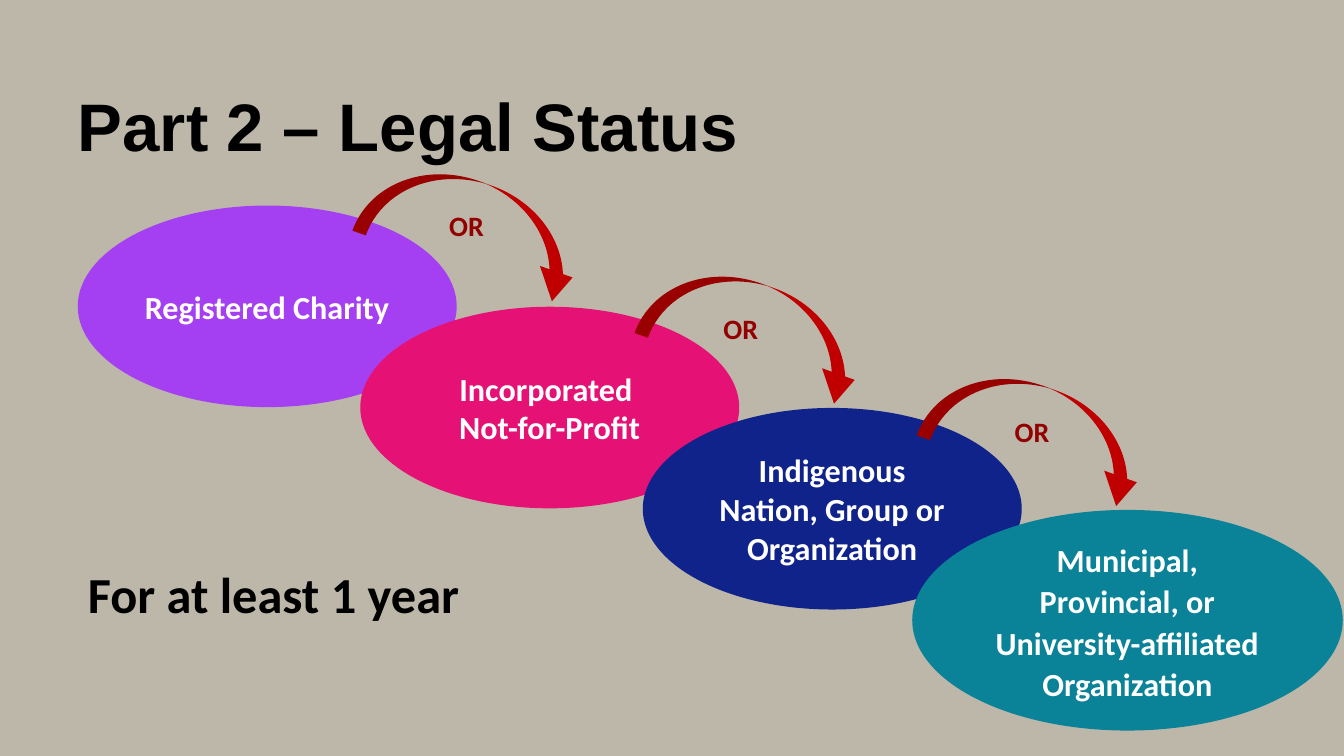
import pptx
import pptx.dml.color
import pptx.enum.shapes
import pptx.enum.text
import pptx.oxml.ns
import pptx.util
from lxml import etree

Cm = pptx.util.Cm
Pt = pptx.util.Pt
SHAPE = pptx.enum.shapes.MSO_SHAPE
ANCHOR = pptx.enum.text.MSO_ANCHOR
ALIGN = pptx.enum.text.PP_ALIGN

THEME = {
    "background": "BDB7AA", "ink": "000000", "label": "FFFFFF",
    "arrow": "C00000", "or": "920000",
    "title_size": 48, "note_size": 36, "label_size": 23, "or_size": 20,
}


def style(paragraph, font_name, size, color, align=ALIGN.LEFT):
    paragraph.alignment = align
    font = paragraph.font
    font.name, font.size, font.bold = font_name, Pt(THEME[size]), True
    font.color.rgb = pptx.dml.color.RGBColor.from_string(THEME[color])


def add_filled(kind, left, top, width, height, color):
    shape = page.shapes.add_shape(kind, Cm(left), Cm(top), Cm(width), Cm(height))
    shape.shadow.inherit = False
    shape.fill.solid()
    shape.fill.fore_color.rgb = pptx.dml.color.RGBColor.from_string(color)
    shape.line.fill.background()
    return shape


# Page
deck = pptx.Presentation()
deck.slide_width, deck.slide_height = Cm(33.87), Cm(19.05)
page = deck.slides.add_slide(deck.slide_layouts[1])
page.background.fill.solid()
page.background.fill.fore_color.rgb = pptx.dml.color.RGBColor.from_string(THEME["background"])

# Title
title = page.shapes.title
title.left, title.top, title.width, title.height = Cm(1.96), Cm(2.03), Cm(26.31), Cm(2.95)
frame = title.text_frame
frame.text = "Part 2 – Legal Status"
frame.auto_size = pptx.enum.text.MSO_AUTO_SIZE.NONE
frame.vertical_anchor = ANCHOR.TOP
frame.margin_left = frame.margin_top = frame.margin_right = 0
frame.margin_bottom = Cm(0.71)
frame.paragraphs[0].line_spacing = Pt(60)
style(frame.paragraphs[0], "Arial", "title_size", "ink")

# Note on duration
note = page.placeholders[1]
note.left, note.top, note.width, note.height = Cm(1.96), Cm(5.79), Cm(28.52), Cm(10.06)
frame = note.text_frame
frame.text = "For at least 1 year"
frame.auto_size = pptx.enum.text.MSO_AUTO_SIZE.NONE
frame.vertical_anchor = ANCHOR.BOTTOM
para = frame.paragraphs[0]
para.line_spacing = 0.9
para.space_before = Pt(0)
properties = para._p.get_or_add_pPr()
properties.set("marL", "0")
properties.set("indent", "0")
etree.SubElement(properties, pptx.oxml.ns.qn("a:buNone"))
style(para, "Calibri", "note_size", "ink")

# Cascade of legal statuses, each linked to the next by an arrow
STATUSES = [
    ("Registered Charity", "A540F2"),
    ("Incorporated \vNot-for-Profit", "E51174"),
    ("Indigenous Nation, Group or Organization", "10238B"),
    ("Municipal, Provincial, or University-affiliated Organization", "0A8297"),
]
OR_LEFTS = [11.07, 17.98, 25.32]
last = len(STATUSES) - 1

for step, (status, color) in enumerate(STATUSES):
    if step < last:
        bounds = (1.96 + 7.12 * step, 5.18 + 2.55 * step, 9.55, 5.08)
    else:
        bounds = (22.99, 12.85, 10.85, 5.56)
    ellipse = add_filled(SHAPE.OVAL, *bounds, color)
    frame = ellipse.text_frame
    frame.word_wrap = True
    frame.vertical_anchor = ANCHOR.MIDDLE
    frame.text = status
    para = frame.paragraphs[0]
    style(para, "Calibri", "label_size", "label", ALIGN.CENTER)
    if step == last:
        para.line_spacing = 1.07
        para.space_after = Pt(8)

for step, or_left in enumerate(OR_LEFTS):
    arrow = add_filled(SHAPE.CURVED_DOWN_ARROW, 9.09 + 7.11 * step, 4.6 + 2.58 * step,
                       5.77, 2.24, THEME["arrow"])
    arrow.rotation = 19.5
    for index, value in enumerate((0.16, 0.39, 0.33)):
        arrow.adjustments[index] = value

    box = page.shapes.add_textbox(Cm(or_left), Cm(5.13 + 2.6 * step), Cm(1.78), Cm(1.12))
    box.text_frame.word_wrap = True
    box.text_frame.text = "OR"
    style(box.text_frame.paragraphs[0], "Calibri", "or_size", "or")

deck.save("out.pptx")
